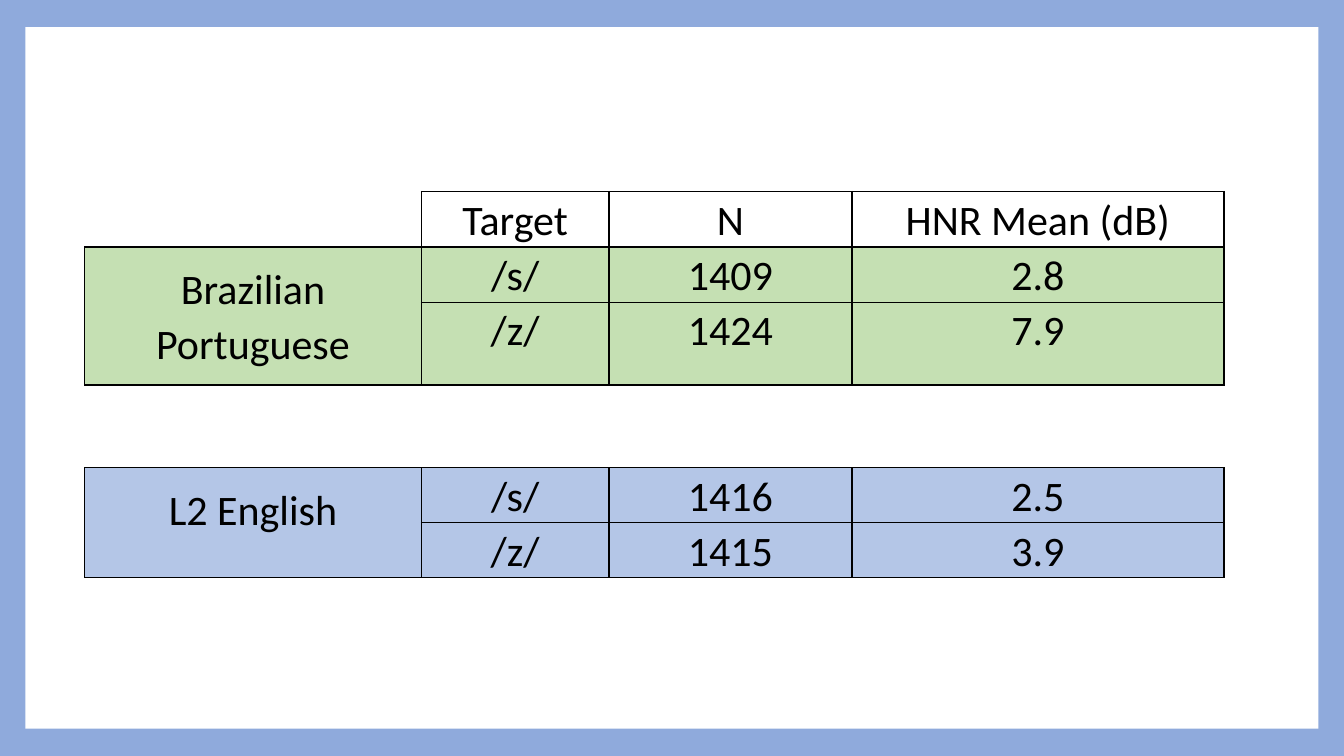
import pptx
import pptx.dml.color
import pptx.enum.shapes
import pptx.enum.text
import pptx.oxml
import pptx.oxml.ns
import pptx.util

BLACK = "000000"
WHITE = "FFFFFF"
FRAME_BLUE = "8FAADC"
PORTUGUESE_GREEN = "C5E0B3"
ENGLISH_BLUE = "B4C6E7"


def paint(fill, color):
    fill.solid()
    fill.fore_color.rgb = pptx.dml.color.RGBColor.from_string(color)


def draw_borders(cell, visible_sides):
    properties = cell._tc.get_or_add_tcPr()
    for side in "LRTB":
        line = pptx.oxml.parse_xml(
            f'<a:ln{side} {pptx.oxml.ns.nsdecls("a")} w="{pptx.util.Pt(1)}"/>'
        )
        if side in visible_sides:
            line.append(pptx.oxml.parse_xml(
                f'<a:solidFill {pptx.oxml.ns.nsdecls("a")}><a:srgbClr val="{BLACK}"/></a:solidFill>'
            ))
        else:
            line.append(pptx.oxml.parse_xml(f'<a:noFill {pptx.oxml.ns.nsdecls("a")}/>'))
        properties.append(line)


presentation = pptx.Presentation()
presentation.slide_width = pptx.util.Inches(13.33)
presentation.slide_height = pptx.util.Inches(7.5)
width, height = presentation.slide_width, presentation.slide_height
slide = presentation.slides.add_slide(presentation.slide_layouts[6])
paint(slide.background.fill, FRAME_BLUE)

margin_x, margin_y = int(width * 0.019), int(height * 0.036)
panel = slide.shapes.add_shape(
    pptx.enum.shapes.MSO_SHAPE.RECTANGLE,
    margin_x, margin_y, width - 2 * margin_x, height - 2 * margin_y,
)
panel.shadow.inherit = False
paint(panel.fill, WHITE)
panel.line.fill.background()

rows = [
    ["", "Target", "N", "HNR Mean (dB)"],
    ["Brazilian Portuguese", "/s/", "1409", "2.8"],
    ["", "/z/", "1424", "7.9"],
    ["", "", "", ""],
    ["L2 English", "/s/", "1416", "2.5"],
    ["", "/z/", "1415", "3.9"],
]
row_colors = [None, PORTUGUESE_GREEN, PORTUGUESE_GREEN, None, ENGLISH_BLUE, ENGLISH_BLUE]
column_widths = [3.34, 1.86, 2.41, 3.69]
row_heights = [0.55, 0.55, 0.82, 0.82, 0.54, 0.54]
gap_row = 3

table = slide.shapes.add_table(
    len(rows), len(column_widths),
    pptx.util.Inches(0.84), pptx.util.Inches(1.9),
    pptx.util.Inches(sum(column_widths)), pptx.util.Inches(sum(row_heights)),
).table
table.first_row = False
table.horz_banding = False
for column, column_width in zip(table.columns, column_widths):
    column.width = pptx.util.Inches(column_width)
for row, row_height in zip(table.rows, row_heights):
    row.height = pptx.util.Inches(row_height)

for row_index, row_texts in enumerate(rows):
    for column_index, text in enumerate(row_texts):
        cell = table.cell(row_index, column_index)
        if row_index == gap_row:
            draw_borders(cell, "TB")
        elif row_index == 0 and column_index == 0:
            draw_borders(cell, "RB")
        else:
            draw_borders(cell, "LRTB")
        if row_colors[row_index]:
            paint(cell.fill, row_colors[row_index])
        else:
            cell.fill.background()
        if not text:
            continue
        side_margin, end_margin = (0.28, 0.14) if column_index == 0 else (0.21, 0)
        cell.margin_left = cell.margin_right = pptx.util.Inches(side_margin)
        cell.margin_top = cell.margin_bottom = pptx.util.Inches(end_margin)
        cell.text_frame.text = text
        paragraph = cell.text_frame.paragraphs[0]
        paragraph.alignment = pptx.enum.text.PP_ALIGN.CENTER
        paragraph.line_spacing = 1.07
        font = paragraph.runs[0].font
        font.name = "Calibri"
        font.size = pptx.util.Pt(30)
        paint(font.fill, BLACK)

for language_row in (1, 4):
    table.cell(language_row, 0).merge(table.cell(language_row + 1, 0))
table.cell(gap_row, 0).merge(table.cell(gap_row, len(column_widths) - 1))

presentation.save("out.pptx")
